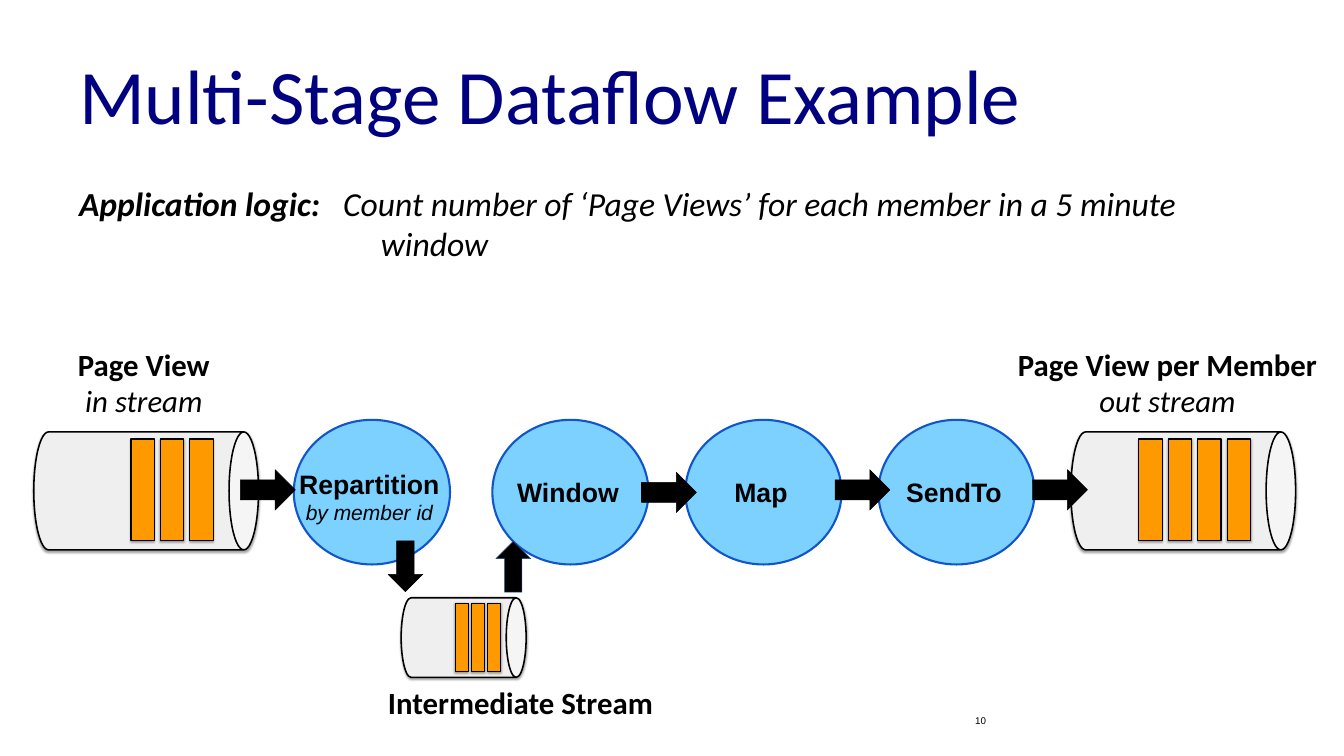
import pptx
import pptx.util
import pptx.dml.color
import pptx.enum.shapes
import pptx.enum.text
import pptx.oxml
import pptx.oxml.ns
import lxml.etree

Inches = pptx.util.Inches
Pt = pptx.util.Pt
SHAPE = pptx.enum.shapes.MSO_SHAPE
ALIGN = pptx.enum.text.PP_ALIGN
ANCHOR = pptx.enum.text.MSO_ANCHOR

COLORS = {
    "title": "000080", "text": "000000", "stream": "EFEFEF", "message": "FF9900",
    "operator": "33B8FF", "operator_line": "1155CC", "arrow": "000000", "black": "000000",
    "up_arrow_line": "1F497D",
}
WIDE_INSETS = (0.24, 0.12)
SHADOW = (
    '<a:effectLst %s><a:outerShdw blurRad="39370" dist="22860" dir="5400000" rotWithShape="0">'
    '<a:srgbClr val="000000"><a:alpha val="35000"/></a:srgbClr></a:outerShdw></a:effectLst>'
    % pptx.oxml.ns.nsdecls("a")
)


def color(name):
    return pptx.dml.color.RGBColor.from_string(COLORS[name])


class DataflowSlide:
    """Holds the slide and draws each kind of element in one style."""

    def __init__(self, slide):
        self.slide = slide

    def format_run(self, run, size, font="Calibri", fill="text", bold=False, italic=False):
        run.font.size = Pt(size)
        run.font.name = font
        run.font.bold = bold
        run.font.italic = italic
        run.font.color.rgb = color(fill)

    def format_frame(self, text_frame, insets, anchor=ANCHOR.TOP):
        text_frame.word_wrap = True
        text_frame.auto_size = pptx.enum.text.MSO_AUTO_SIZE.NONE
        text_frame.vertical_anchor = anchor
        text_frame.margin_left = text_frame.margin_right = Inches(insets[0])
        text_frame.margin_top = text_frame.margin_bottom = Inches(insets[1])

    def title(self, text, left, top, width, height):
        title = self.slide.shapes.title
        title.left, title.top = Inches(left), Inches(top)
        title.width, title.height = Inches(width), Inches(height)
        title.text_frame.text = text
        self.format_frame(title.text_frame, WIDE_INSETS, ANCHOR.MIDDLE)
        paragraph = title.text_frame.paragraphs[0]
        paragraph.alignment = ALIGN.LEFT
        self.format_run(paragraph.runs[0], 110, fill="title")

    def text(self, lines, box, styles, insets=WIDE_INSETS, align=ALIGN.CENTER, anchor=ANCHOR.TOP):
        """Add a text box; each line has its own run style."""
        shape = self.slide.shapes.add_textbox(*map(Inches, box))
        self.format_frame(shape.text_frame, insets, anchor)
        shape.text_frame.text = "\n".join(lines)
        for paragraph, style in zip(shape.text_frame.paragraphs, styles):
            paragraph.alignment = align
            self.format_run(paragraph.runs[0], **style)
        return shape

    def shape(self, kind, box, fill, line, line_width, shadow=False):
        shape = self.slide.shapes.add_shape(kind, *map(Inches, box))
        shape.shadow.inherit = False
        shape.fill.solid()
        shape.fill.fore_color.rgb = color(fill)
        shape.line.color.rgb = color(line)
        shape.line.width = Pt(line_width)
        if shadow:
            properties = shape._element.spPr
            properties.replace(properties.find(pptx.oxml.ns.qn("a:effectLst")),
                               pptx.oxml.parse_xml(SHADOW))
        return shape

    def stream(self, left, top, width, height, bars, first, pitch, bar_box):
        """Add a lying cylinder with evenly spaced messages; return its parts."""
        offset = (width - height) / 2
        can = self.shape(SHAPE.CAN, (left + offset, top - offset, height, width),
                         "stream", "black", 2.25, shadow=True)
        can.rotation = 90
        bar_top, bar_width, bar_height = bar_box
        return [can] + [
            self.shape(SHAPE.RECTANGLE, (first + index * pitch, bar_top, bar_width, bar_height),
                       "message", "black", 1.5, shadow=True)
            for index in range(bars)
        ]

    def operator(self, left, name, detail=None):
        circle = self.shape(SHAPE.OVAL, (left, 8.33, 3.1, 2.87), "operator", "operator_line", 3)
        fill_color = circle._element.spPr.find(".//" + pptx.oxml.ns.qn("a:srgbClr"))
        lxml.etree.SubElement(fill_color, pptx.oxml.ns.qn("a:alpha"), val="64000")
        lines = [name, detail] if detail else [name]
        label = self.text(lines, (left - 0.17, 9.18 if detail else 9.35, 3.34, 1.2),
                          [dict(size=38, font="Arial", bold=True),
                           dict(size=30, font="Arial", italic=True)], insets=(0.1, 0.1))
        self.group([circle, label])

    def arrow(self, kind, box, line="black"):
        self.shape(kind, box, "arrow", line, 0.75)

    def group(self, shapes):
        self.slide.shapes.add_group_shape(shapes=shapes)


def main():
    presentation = pptx.Presentation()
    presentation.slide_width = Inches(26.67)
    presentation.slide_height = Inches(15)
    dataflow = DataflowSlide(presentation.slides.add_slide(presentation.slide_layouts[5]))

    # Title and application logic
    dataflow.title("Multi-Stage Dataflow Example", 1.33, 0.6, 24, 2.5)
    italic = dict(size=48, italic=True)
    logic = dataflow.text(["Application logic:", "window"], (1.33, 3.5, 24, 2.77),
                          [dict(italic, bold=True), italic], align=ALIGN.LEFT)
    first, second = logic.text_frame.paragraphs
    run = first.add_run()
    run.text = "\tCount number of ‘Page Views’ for each member in a 5 minute"
    dataflow.format_run(run, **italic)
    tabs = lxml.etree.SubElement(first._p.get_or_add_pPr(), pptx.oxml.ns.qn("a:tabLst"))
    lxml.etree.SubElement(tabs, pptx.oxml.ns.qn("a:tab"), pos=str(Inches(5.24)), algn="l")
    second._p.get_or_add_pPr().set("marL", str(Inches(5.99)))

    # Slide number
    dataflow.text(["10"], (19.11, 13.9, 6.22, 0.8), [dict(size=14, font="Arial")],
                  align=ALIGN.LEFT, anchor=ANCHOR.MIDDLE)

    # Input and output streams
    heading = dict(size=44, bold=True)
    direction = dict(size=44, italic=True)
    for left, bars, first_bar, lines, label_left, label_width in (
        (0.67, 3, 2.6, ["Page View", "in stream"], 0.85, 4.01),
        (21.25, 4, 22.6, ["Page View per Member", "out stream"], 19.67, 7),
    ):
        parts = dataflow.stream(left, 8.57, 4.46, 2.34, bars, first_bar, 0.585,
                                (8.71, 0.46, 2.02))
        label = dataflow.text(lines, (label_left, 6.73, label_width, 1.71), [heading, direction])
        dataflow.group(parts + [label])

    # Operators
    dataflow.operator(5.83, "Repartition", "by member id")
    for index, name in enumerate(["Window", "Map", "SendTo"]):
        dataflow.operator(9.77 + index * 3.83, name)

    # Arrows along the main flow
    for left, top in ((4.77, 9.32), (12.73, 9.37), (16.57, 9.32), (20.49, 9.32)):
        dataflow.arrow(SHAPE.RIGHT_ARROW, (left, top, 1.09, 0.8))

    # Intermediate stream with its arrows
    dataflow.group(dataflow.stream(7.96, 11.86, 2.48, 1.58, 3, 9.03, 0.325, (11.97, 0.26, 1.36)))
    dataflow.text(["Intermediate Stream"], (6.83, 13.44, 7, 1.71), [heading])
    dataflow.arrow(SHAPE.DOWN_ARROW, (7.7, 10.73, 0.69, 1.01))
    dataflow.arrow(SHAPE.UP_ARROW, (9.84, 10.74, 0.69, 1.01), "up_arrow_line")

    presentation.save("out.pptx")


if __name__ == "__main__":
    main()
